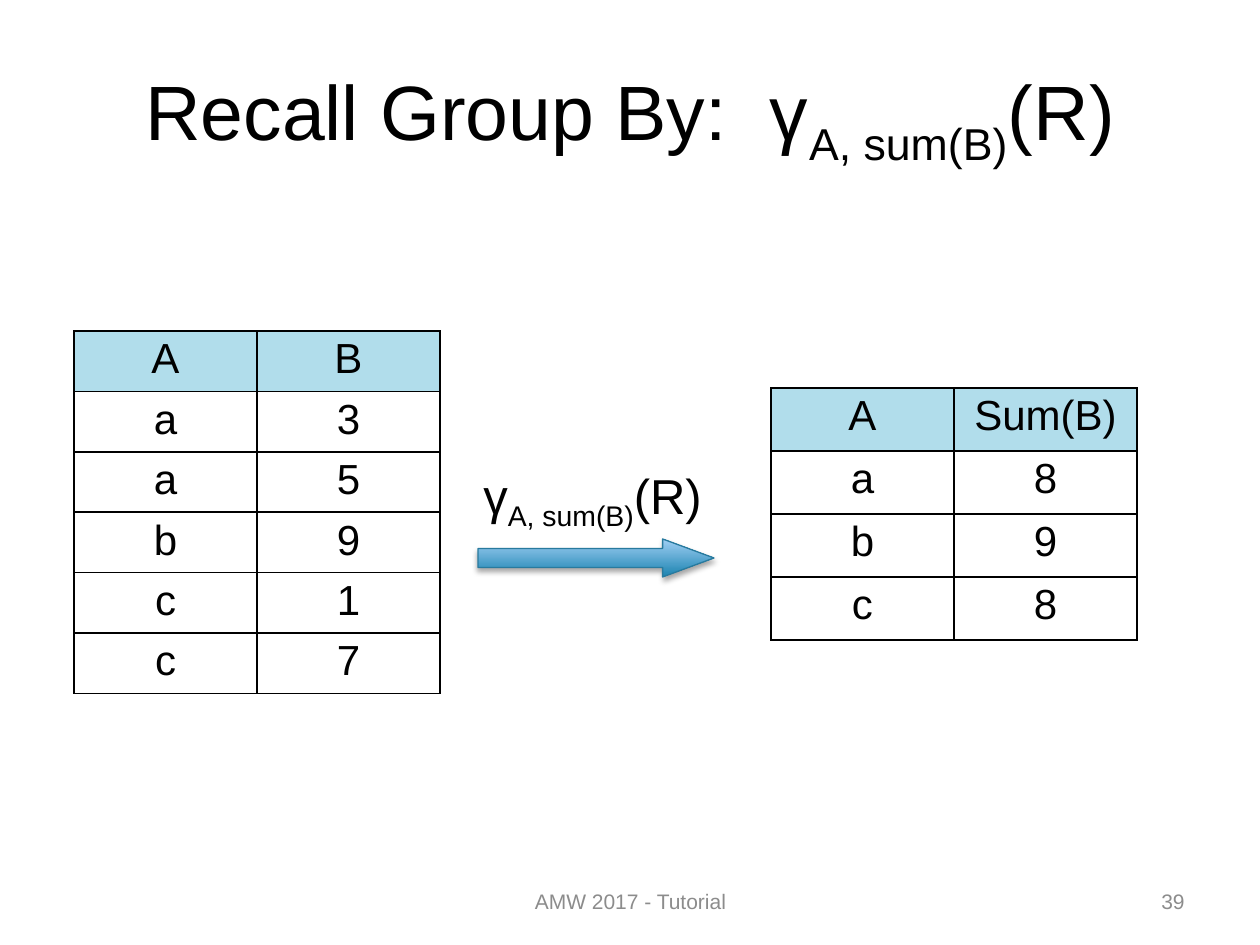
from dataclasses import dataclass

from lxml.etree import SubElement
from pptx import Presentation
from pptx.dml.color import RGBColor
from pptx.enum.shapes import MSO_SHAPE
from pptx.enum.text import MSO_ANCHOR, MSO_AUTO_SIZE, PP_ALIGN
from pptx.oxml import parse_xml
from pptx.oxml.ns import nsdecls, qn
from pptx.util import Emu, Pt

EMU_PER_PX = 914400 / 126


@dataclass(frozen=True)
class Theme:
    font: str = "Arial"
    text: str = "000000"
    muted: str = "8C8C8C"
    header: str = "B1DDEB"
    border: str = "000000"
    arrow_dark: str = "1B83B0"
    arrow_light: str = "A0CFF4"
    arrow_line: str = "287A9E"
    title_size: int = 44
    label_size: int = 28
    cell_size: int = 24
    footer_size: int = 12


THEME = Theme()
GROUP_BY = [("γ", False), ("A, sum(B)", True), ("(R)", False)]


def px(n):
    return Emu(round(n * EMU_PER_PX))


def box(*lengths):
    return [px(n) for n in lengths]


def rgb(value):
    return RGBColor.from_string(value)


def write(tf, runs, size, color=THEME.text, align=PP_ALIGN.LEFT,
          anchor=MSO_ANCHOR.TOP):
    """Fill one paragraph from a string or from (text, is_subscript) pairs."""
    if isinstance(runs, str):
        runs = [(runs, False)]
    tf.vertical_anchor = anchor
    p = tf.paragraphs[0]
    p.alignment = align
    for text, subscript in runs:
        r = p.add_run()
        r.text = text
        r.font.name = THEME.font
        r.font.size = Pt(size)
        r.font.color.rgb = rgb(color)
        if subscript:
            r._r.get_or_add_rPr().set("baseline", "-25000")


def add_title(s, runs):
    title = s.shapes.title
    title.left, title.top, title.width, title.height = box(63, 38, 1134, 157)
    write(title.text_frame, runs, THEME.title_size, align=PP_ALIGN.CENTER,
          anchor=MSO_ANCHOR.MIDDLE)


def add_text(s, bounds, runs, size, wrap=True, **fmt):
    tf = s.shapes.add_textbox(*box(*bounds)).text_frame
    tf.word_wrap = wrap
    if not wrap:
        tf.auto_size = MSO_AUTO_SIZE.SHAPE_TO_FIT_TEXT
    write(tf, runs, size, **fmt)


def add_borders(cell):
    tc_pr = cell._tc.get_or_add_tcPr()
    for i, side in enumerate(("lnL", "lnR", "lnT", "lnB")):
        tc_pr.insert(i, parse_xml(
            f'<a:{side} {nsdecls("a")} w="{Pt(1)}"><a:solidFill>'
            f'<a:srgbClr val="{THEME.border}"/></a:solidFill></a:{side}>'))


def add_relation(s, bounds, rows):
    """Add a table whose first row holds the attribute names."""
    frame = s.shapes.add_table(len(rows), len(rows[0]), *box(*bounds))
    table = frame.table
    table.first_row = table.horz_banding = False
    for i, values in enumerate(rows):
        for j, value in enumerate(values):
            cell = table.cell(i, j)
            cell.margin_top = cell.margin_bottom = px(5)
            if i == 0:
                cell.fill.solid()
                cell.fill.fore_color.rgb = rgb(THEME.header)
            else:
                cell.fill.background()
            add_borders(cell)
            write(cell.text_frame, value, THEME.cell_size,
                  align=PP_ALIGN.CENTER)


def add_shadow(sp):
    sp.shadow.inherit = False
    effects = sp._element.spPr.find(qn("a:effectLst"))
    shadow = SubElement(effects, qn("a:outerShdw"), blurRad=str(Pt(3.1)),
                        dist=str(Pt(1.8)), dir="5400000", rotWithShape="0")
    color = SubElement(shadow, qn("a:srgbClr"), val="000000")
    SubElement(color, qn("a:alpha"), val="35000")


def add_arrow(s, bounds):
    sp = s.shapes.add_shape(MSO_SHAPE.RIGHT_ARROW, *box(*bounds))
    sp.adjustments[0] = 0.5
    sp.adjustments[1] = 1.35
    sp.fill.gradient()
    sp.fill.gradient_angle = 90
    for stop, color in zip(sp.fill.gradient_stops,
                           (THEME.arrow_dark, THEME.arrow_light)):
        stop.color.rgb = rgb(color)
    sp.line.color.rgb = rgb(THEME.arrow_line)
    sp.line.width = Pt(0.75)
    add_shadow(sp)


def main():
    prs = Presentation()
    prs.slide_width, prs.slide_height = box(1260, 945)
    s = prs.slides.add_slide(prs.slide_layouts[5])

    add_title(s, [("Recall Group By:  ", False), *GROUP_BY])
    footer = dict(size=THEME.footer_size, color=THEME.muted,
                  anchor=MSO_ANCHOR.MIDDLE)
    add_text(s, (431, 876, 399, 50), "AMW 2017 - Tutorial",
             align=PP_ALIGN.CENTER, **footer)
    add_text(s, (903, 876, 294, 50), "39", align=PP_ALIGN.RIGHT, **footer)

    add_relation(s, (74, 331, 366, 357),
                 ["AB", "a3", "a5", "b9", "c1", "c7"])
    add_text(s, (471, 459, 266, 72), GROUP_BY, THEME.label_size, wrap=False)
    add_relation(s, (771, 388, 366, 252),
                 [("A", "Sum(B)"), "a8", "b9", "c8"])
    add_arrow(s, (478, 539, 236, 38))

    prs.save("out.pptx")


if __name__ == "__main__":
    main()
